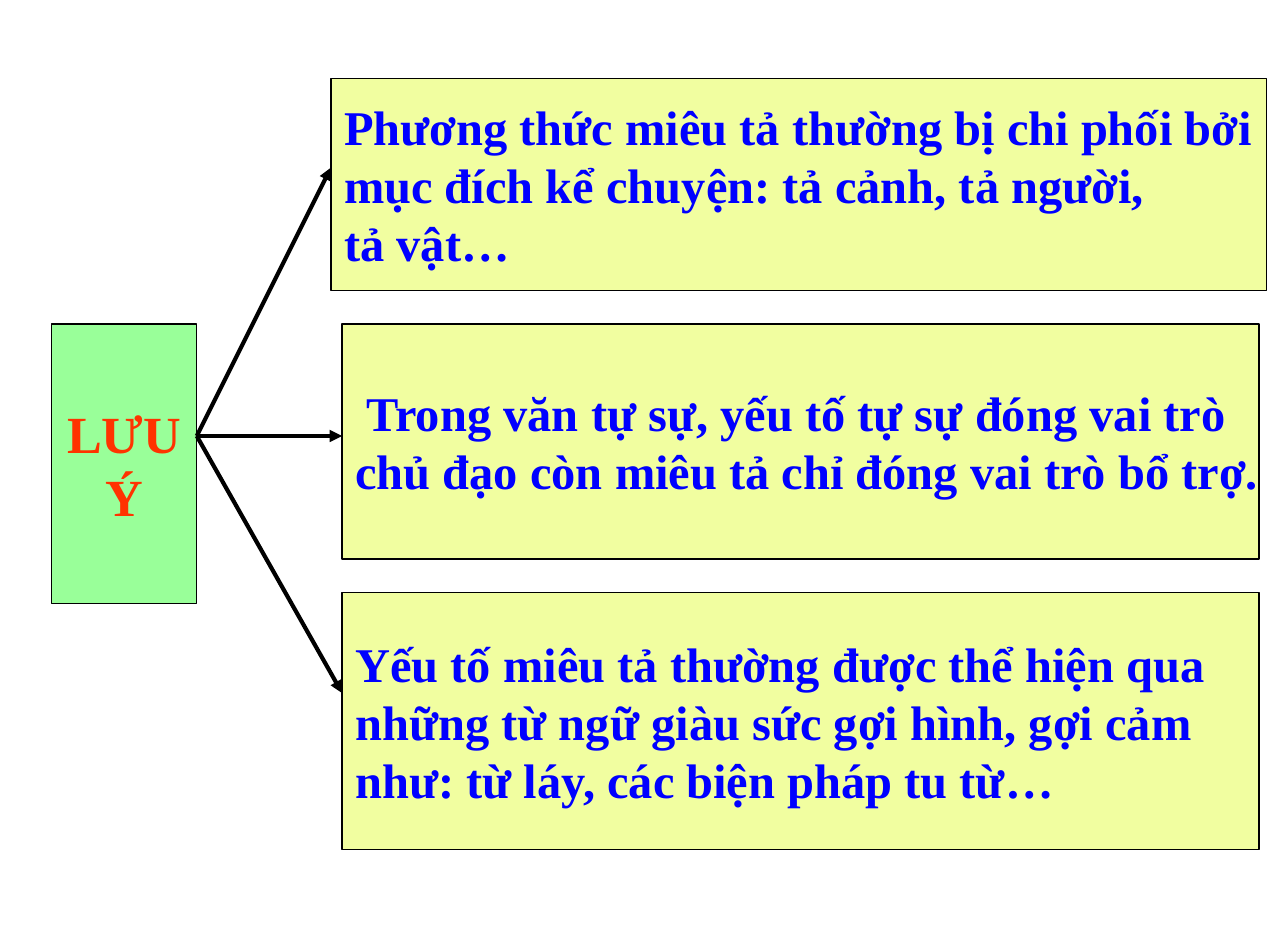
from dataclasses import dataclass

from lxml.etree import SubElement
from pptx import Presentation
from pptx.dml.color import RGBColor
from pptx.enum.shapes import MSO_CONNECTOR as Connector, MSO_SHAPE as ShapeKind
from pptx.enum.text import MSO_ANCHOR as Anchor, PP_ALIGN as Align
from pptx.oxml.ns import qn
from pptx.slide import Slide
from pptx.text.text import TextFrame
from pptx.util import Pt

FONT = "Times New Roman"
BLACK = "000000"
NOTE_FILL, NOTE_TEXT = "F1FEA0", "0000FF"
HUB_FILL, HUB_TEXT = "99FF99", "FF3300"


@dataclass(frozen=True)
class Box:
    left: float
    top: float
    width: float
    height: float
    lines: tuple[str, ...]


@dataclass(frozen=True)
class Note:
    box: Box
    arrow_y: float


HUB = Box(27.6, 174, 78, 150, ("LƯU", "Ý"))
HUB_ARROW_Y = 234
NOTES = (
    Note(Box(177.6, 42, 502, 114, (
        "Phương thức miêu tả thường bị chi phối bởi",
        "mục đích kể chuyện: tả cảnh, tả người,",
        "tả vật…",
    )), 90),
    Note(Box(183.6, 174, 492, 126, (
        " Trong văn tự sự, yếu tố tự sự đóng vai trò",
        "chủ đạo còn miêu tả chỉ đóng vai trò bổ trợ.",
    )), HUB_ARROW_Y),
    Note(Box(183.6, 318, 492, 138, (
        "Yếu tố miêu tả thường được thể hiện qua",
        "những từ ngữ giàu sức gợi hình, gợi cảm",
        "như: từ láy, các biện pháp tu từ…",
    )), 372),
)


def colour(value: str) -> RGBColor:
    return RGBColor.from_string(value)


def write_lines(frame: TextFrame, lines: tuple[str, ...], *, size: float,
                text_colour: str, align: Align) -> None:
    """Write one bold paragraph per line, centred vertically and unwrapped."""
    frame.word_wrap = False
    frame.vertical_anchor = Anchor.MIDDLE
    for index, line in enumerate(lines):
        paragraph = frame.add_paragraph() if index else frame.paragraphs[0]
        paragraph.alignment = align
        run = paragraph.add_run()
        run.text = line
        run.font.name = FONT
        run.font.size = Pt(size)
        run.font.bold = True
        run.font.color.rgb = colour(text_colour)


def draw_box(slide: Slide, box: Box, *, fill: str, size: float,
             text_colour: str, align: Align = Align.LEFT) -> None:
    shape = slide.shapes.add_shape(
        ShapeKind.RECTANGLE, Pt(box.left), Pt(box.top), Pt(box.width), Pt(box.height))
    shape.shadow.inherit = False
    shape.fill.solid()
    shape.fill.fore_color.rgb = colour(fill)
    shape.line.color.rgb = colour(BLACK)
    shape.line.width = Pt(0.75)
    write_lines(shape.text_frame, box.lines, size=size,
                text_colour=text_colour, align=align)


def draw_arrow(slide: Slide, start: tuple[float, float], end: tuple[float, float]) -> None:
    arrow = slide.shapes.add_connector(
        Connector.STRAIGHT, *(Pt(value) for value in (*start, *end)))
    arrow.line.color.rgb = colour(BLACK)
    arrow.line.width = Pt(2.25)
    SubElement(arrow.line._get_or_add_ln(), qn("a:tailEnd"), type="triangle")
    SubElement(arrow._element.spPr, qn("a:effectLst"))


def main() -> None:
    presentation = Presentation()
    presentation.slide_width, presentation.slide_height = Pt(691.2), Pt(504)
    slide = presentation.slides.add_slide(presentation.slide_layouts[6])

    for note in NOTES:
        draw_box(slide, note.box, fill=NOTE_FILL, size=26, text_colour=NOTE_TEXT)
    draw_box(slide, HUB, fill=HUB_FILL, size=28, text_colour=HUB_TEXT, align=Align.CENTER)
    for note in NOTES:
        draw_arrow(slide, (HUB.left + HUB.width, HUB_ARROW_Y), (note.box.left, note.arrow_y))

    presentation.save("out.pptx")


if __name__ == "__main__":
    main()
